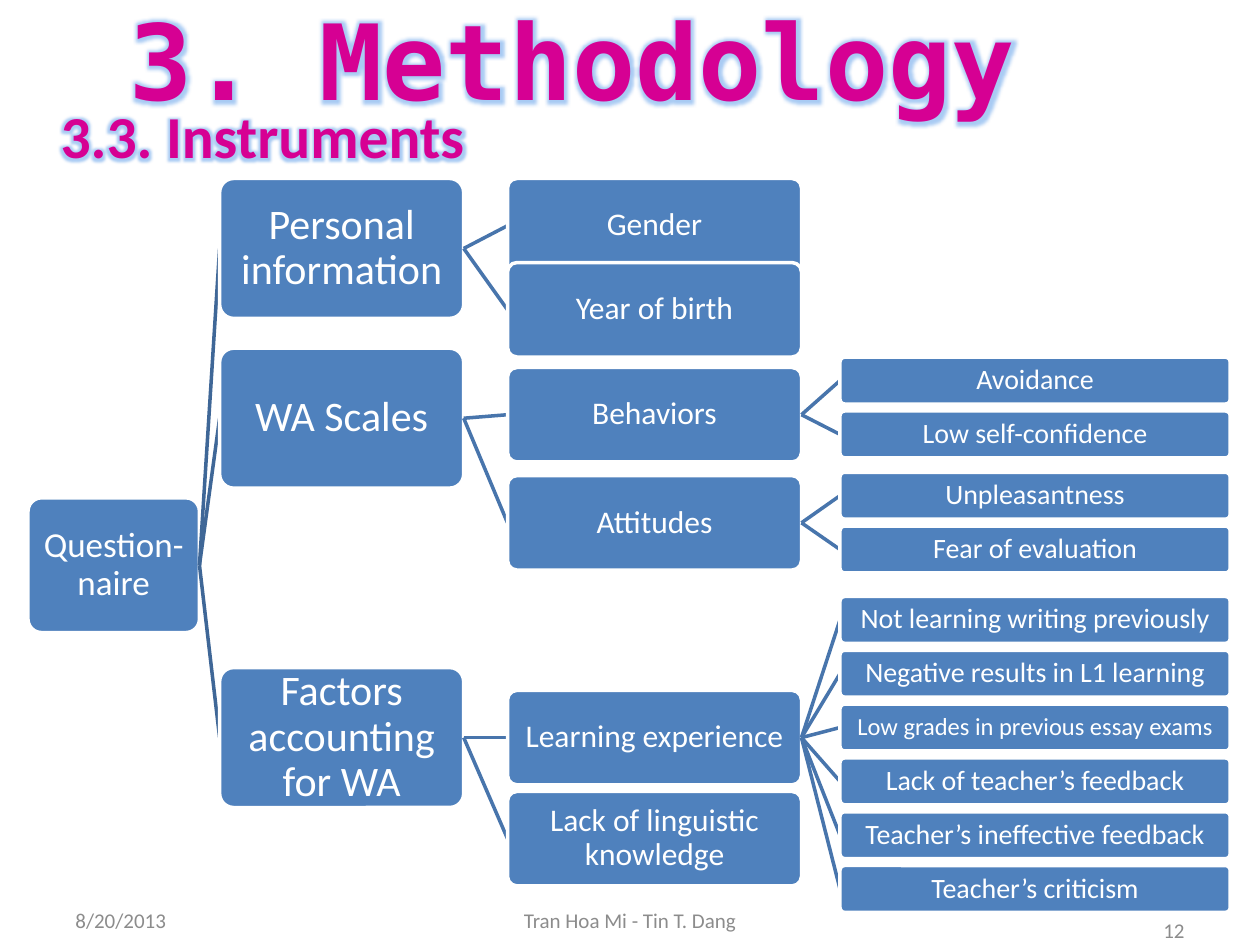
from dataclasses import dataclass

from lxml import etree
from pptx import Presentation
from pptx.dml.color import RGBColor
from pptx.enum.shapes import MSO_CONNECTOR, MSO_SHAPE
from pptx.enum.text import MSO_ANCHOR, MSO_AUTO_SIZE, PP_ALIGN
from pptx.oxml.ns import qn
from pptx.util import Pt

ROUND = MSO_SHAPE.ROUNDED_RECTANGLE
STRAIGHT = MSO_CONNECTOR.STRAIGHT
TOP, MIDDLE = MSO_ANCHOR.TOP, MSO_ANCHOR.MIDDLE
GROW = MSO_AUTO_SIZE.SHAPE_TO_FIT_TEXT
LEFT, CENTER, RIGHT = PP_ALIGN.LEFT, PP_ALIGN.CENTER, PP_ALIGN.RIGHT

WHITE = RGBColor(0xFF, 0xFF, 0xFF)
BLUE = RGBColor(0x4F, 0x81, 0xBD)
TRUNK = RGBColor(0x3F, 0x67, 0x97)
BRANCH = RGBColor(0x48, 0x75, 0xAC)
PINK = RGBColor(0xD6, 0x00, 0x93)
EDGE = RGBColor(0x46, 0x7A, 0xB8)
GLOW = RGBColor(0x2A, 0x7F, 0xE3)
GRAY = RGBColor(0x8C, 0x8C, 0x8C)


@dataclass(frozen=True)
class Level:
    """A column of equal boxes; link is the colour of the lines into it."""
    left: float
    width: float
    height: float
    size: int
    inset: float
    link: RGBColor


@dataclass(frozen=True)
class Node:
    text: str
    mid: float
    kids: tuple = ()
    size: int = 0


@dataclass(frozen=True)
class Label:
    text: str
    left: float
    top: float
    width: float
    align: PP_ALIGN


LEVELS = (
    Level(16, 98, 77, 20, 1, TRUNK),
    Level(125.5, 139.5, 80, 24, 3.5, TRUNK),
    Level(290, 168, 54, 18, 2.5, BRANCH),
    Level(480, 223, 26.8, 16, 1.5, BRANCH),
)
STEP = 30.75


def leaves(first: float, *names: str, sizes: dict | None = None) -> tuple:
    """Evenly stacked end nodes, the first centred at the given height."""
    sizes = sizes or {}
    return tuple(Node(name, first + i * STEP, size=sizes.get(name, 0))
                 for i, name in enumerate(names))


GRADES = "Low grades in previous essay exams"
TREE = Node("Question-naire", 323, (
    Node("Personal information", 142, (
        Node("Gender", 129), Node("Year of birth", 177))),
    Node("WA Scales", 239, (
        Node("Behaviors", 237,
             leaves(217.5, "Avoidance", "Low self-confidence")),
        Node("Attitudes", 298.75,
             leaves(283.25, "Unpleasantness", "Fear of evaluation")))),
    Node("Factors accounting for WA", 421.5, (
        Node("Learning experience", 421.5, leaves(
            354.25, "Not learning writing previously",
            "Negative results in L1 learning", GRADES,
            "Lack of teacher’s feedback", "Teacher’s ineffective feedback",
            "Teacher’s criticism", sizes={GRADES: 14})),
        Node("Lack of linguistic knowledge", 479.25))),
))

LABELS = (
    Label("8/20/2013", 36, 511.2, 168, LEFT),
    Label("Tran Hoa Mi - Tin T. Dang", 246, 511.2, 228, CENTER),
    Label("12", 516, 517, 168, RIGHT),
)


def apply(item, form: dict) -> None:
    for key, value in form.items():
        setattr(item, key, value)


def write(shape, text: str, align: PP_ALIGN, size: int, color: RGBColor,
          frame: dict, face: str = "Calibri", bold: bool = False):
    """Put one formatted run in the shape and return it."""
    apply(shape.text_frame, {"word_wrap": True, **frame})
    para = shape.text_frame.paragraphs[0]
    para.alignment = align
    run = para.add_run()
    run.text = text
    apply(run.font, {"name": face, "size": Pt(size), "bold": bold})
    run.font.color.rgb = color
    return run


def tint(parent, color: RGBColor):
    return etree.SubElement(parent, qn("a:srgbClr"), val=str(color))


def shine(run) -> None:
    """Give the letters a thin outline and a soft glow."""
    props = run.font.fill._xPr
    line = etree.Element(qn("a:ln"), w=str(Pt(0.83)))
    tint(etree.SubElement(line, qn("a:solidFill")), EDGE)
    props.insert(0, line)
    effect = etree.Element(qn("a:effectLst"))
    glow = etree.SubElement(effect, qn("a:glow"), rad=str(Pt(8)))
    etree.SubElement(tint(glow, GLOW), qn("a:alpha"), val="40000")
    props.find(qn("a:solidFill")).addnext(effect)


def join(shapes, x1: float, y1: float, x2: float, y2: float,
         color: RGBColor) -> None:
    line = shapes.add_connector(STRAIGHT, Pt(x1), Pt(y1), Pt(x2), Pt(y2))
    line.line.color.rgb = color
    line.line.width = Pt(2)
    etree.SubElement(line._element.spPr, qn("a:effectLst"))


def box(shapes, node: Node, level: Level) -> None:
    shape = shapes.add_shape(ROUND, Pt(level.left),
                             Pt(node.mid - level.height / 2),
                             Pt(level.width), Pt(level.height))
    shape.adjustments[0] = 0.1
    shape.shadow.inherit = False
    shape.fill.solid()
    shape.fill.fore_color.rgb = BLUE
    shape.line.color.rgb = WHITE
    shape.line.width = Pt(2)
    sides = ("left", "right", "top", "bottom")
    frame = {f"margin_{side}": Pt(level.inset) for side in sides}
    write(shape, node.text, CENTER, node.size or level.size, WHITE,
          {"vertical_anchor": MIDDLE, **frame})
    shape.text_frame.paragraphs[0].line_spacing = 0.9


def grow(shapes, node: Node, depth: int = 0) -> None:
    """Draw a node, then each line and branch that leaves it."""
    level = LEVELS[depth]
    box(shapes, node, level)
    for kid in node.kids:
        child = LEVELS[depth + 1]
        join(shapes, level.left + level.width, node.mid,
             child.left, kid.mid, child.link)
        grow(shapes, kid, depth + 1)


def main() -> None:
    deck = Presentation()
    apply(deck, {"slide_width": Pt(720), "slide_height": Pt(540)})
    slide = deck.slides.add_slide(deck.slide_layouts[5])
    shapes = slide.shapes
    grow(shapes, TREE)

    for label in LABELS:
        note = shapes.add_textbox(Pt(label.left), Pt(label.top),
                                  Pt(label.width), Pt(28.75))
        write(note, label.text, label.align, 12, GRAY,
              {"vertical_anchor": MIDDLE})

    frame = {"vertical_anchor": TOP, "auto_size": GROW}
    part = shapes.add_textbox(Pt(-84), Pt(53), Pt(468), Pt(48))
    shine(write(part, "3.3. Instruments", CENTER, 34, PINK, frame, bold=True))

    title = shapes.title
    apply(title, {"left": Pt(42), "top": Pt(-6),
                  "width": Pt(570), "height": Pt(80)})
    shine(write(title, "3. Methodology", CENTER, 60, PINK, frame,
                "DejaVu Sans Mono", True))
    deck.save("out.pptx")


if __name__ == "__main__":
    main()
